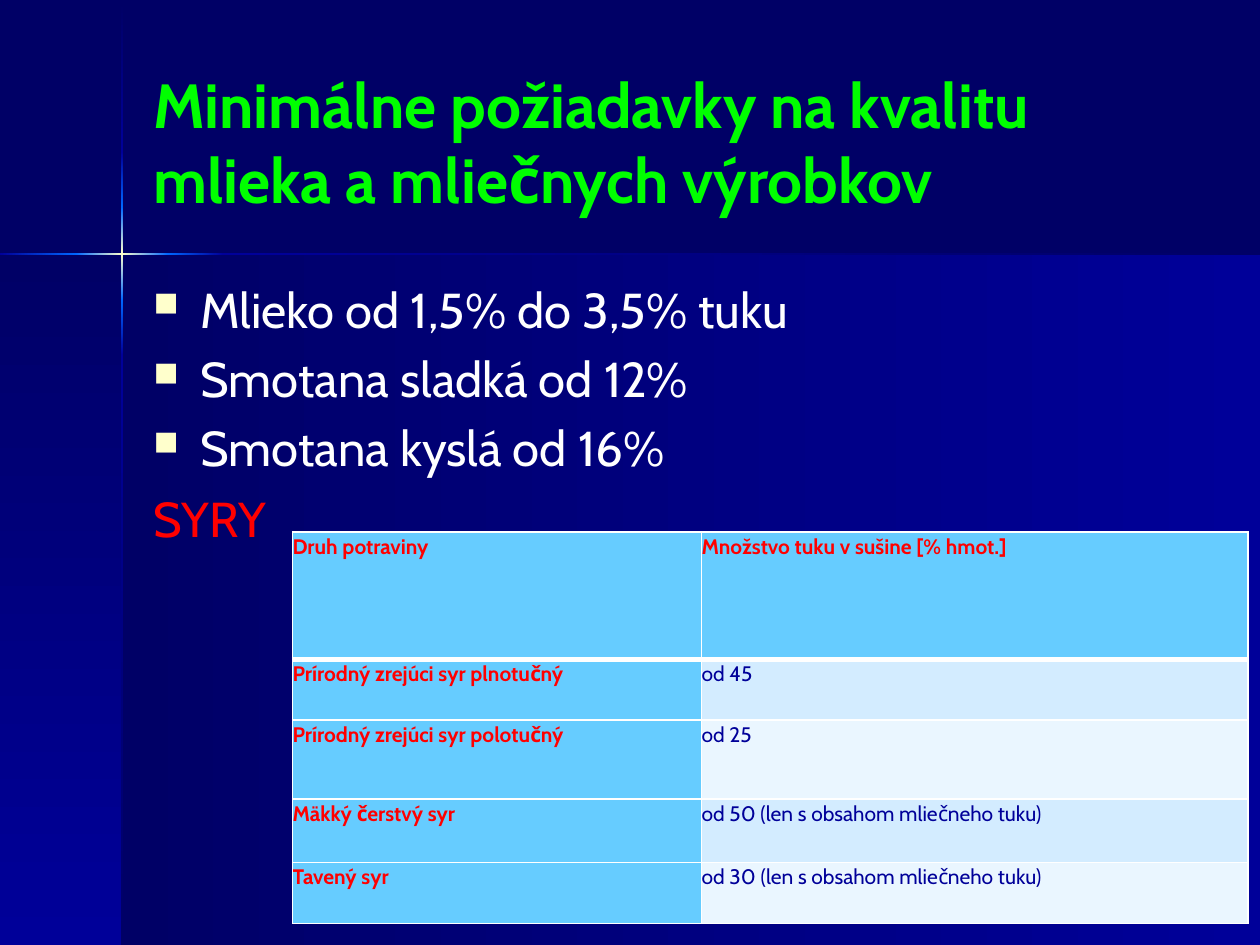
from copy import deepcopy
from dataclasses import dataclass

from lxml import etree
from pptx import Presentation
from pptx import util as u
from pptx.dml.color import RGBColor
from pptx.enum import shapes, text
from pptx.oxml.ns import qn

FONT = "Cabin"
NAVY, BLUE, AZURE, CREAM = "000066", "000099", "0066FF", "FFFFCC"
WHITE, RED, GREEN, SKY = "FFFFFF", "FF0000", "00FF00", "66CCFF"
BANDS = ("D3ECFF", "EAF6FF")
LEFTWARD, UPWARD = 180, 90


@dataclass
class Panel:
    left: float
    top: float
    width: float
    height: float
    colors: tuple
    angle: int


@dataclass
class Line:
    words: str
    size: float
    color: str
    bold: bool = False
    before: float = 0
    bullet: bool = False
    spacing: float = 1.0


def rgb(value: str) -> RGBColor:
    return RGBColor.from_string(value)


def draw_panel(slide, panel: Panel) -> None:
    rect = slide.shapes.add_shape(
        shapes.MSO_SHAPE.RECTANGLE,
        *map(u.Pt, (panel.left, panel.top, panel.width, panel.height)))
    rect.shadow.inherit = False
    rect.line.fill.background()
    rect.fill.gradient()
    rect.fill.gradient_angle = panel.angle
    if len(panel.colors) == 3:
        first = next(rect._element.spPr.iter(qn("a:gs")))
        middle = deepcopy(first)
        middle.set("pos", "50000")
        first.addnext(middle)
    for stop, color in zip(rect.fill.gradient_stops, panel.colors):
        stop.color.rgb = rgb(color)


def add_bullet(paragraph) -> None:
    props = paragraph._p.get_or_add_pPr()
    props.set("marL", str(u.Pt(27)))
    props.set("indent", str(u.Pt(-27)))
    color = etree.SubElement(props, qn("a:buClr"))
    etree.SubElement(color, qn("a:srgbClr"), val=CREAM)
    etree.SubElement(props, qn("a:buSzPct"), val="70000")
    etree.SubElement(props, qn("a:buChar"), char="■")


def write_lines(frame, lines: list[Line]) -> None:
    frame.word_wrap = True
    frame.text = "\n".join(line.words for line in lines)
    for paragraph, line in zip(frame.paragraphs, lines):
        paragraph.space_before = u.Pt(line.before)
        paragraph.line_spacing = line.spacing
        if line.bullet:
            add_bullet(paragraph)
        font = paragraph.runs[0].font
        font.name, font.size, font.bold = FONT, u.Pt(line.size), line.bold
        font.color.rgb = rgb(line.color)


def draw_text(slide, top: float, height: float, anchor, lines: list[Line]) -> None:
    box = slide.shapes.add_textbox(*map(u.Pt, (84, top, 594, height)))
    frame = box.text_frame
    frame.vertical_anchor = anchor
    frame.margin_left = frame.margin_right = u.Pt(3.6)
    frame.margin_top = frame.margin_bottom = u.Pt(3.6)
    write_lines(frame, lines)


def draw_borders(cell, widths: dict[str, float]) -> None:
    props = cell._tc.get_or_add_tcPr()
    for index, (side, width) in enumerate(widths.items()):
        border = etree.Element(qn(f"a:ln{side}"), w=str(u.Pt(width)))
        fill = etree.SubElement(border, qn("a:solidFill"))
        etree.SubElement(fill, qn("a:srgbClr"), val=WHITE)
        props.insert(index, border)


def draw_table(slide, rows: list[tuple], widths: list, heights: list) -> None:
    table = slide.shapes.add_table(
        len(rows), len(widths),
        *map(u.Pt, (167.2, 304, sum(widths), sum(heights)))).table
    table.first_row = table.horz_banding = False
    for column, width in zip(table.columns, widths):
        column.width = u.Pt(width)
    for r, (row, height) in enumerate(zip(rows, heights)):
        table.rows[r].height = u.Pt(height)
        for c, words in enumerate(row):
            cell = table.cell(r, c)
            cell.margin_left = cell.margin_right = 0
            cell.margin_top = cell.margin_bottom = 0
            heading = r == 0 or c == 0
            cell.fill.solid()
            cell.fill.fore_color.rgb = rgb(SKY if heading else BANDS[(r - 1) % 2])
            color = RED if heading else BLUE
            write_lines(cell.text_frame,
                        [Line(words, 12, color, bold=heading, spacing=1.07)])
            draw_borders(cell, {"L": 1, "R": 1, "T": 3 if r == 1 else 1,
                                "B": 3 if r == 0 else 1})


def main() -> None:
    deck = Presentation()
    deck.slide_width, deck.slide_height = u.Pt(720), u.Pt(540)
    slide = deck.slides.add_slide(deck.slide_layouts[6])
    slide.background.fill.solid()
    slide.background.fill.fore_color.rgb = rgb(NAVY)

    # Background panels, then the glowing cross
    glow = (AZURE, CREAM, AZURE)
    panels = [
        Panel(70, 145.5, 650, 394.5, (BLUE, NAVY), LEFTWARD),
        Panel(0, 145.5, 70, 394.5, (BLUE, NAVY), UPWARD),
    ]
    for top, height, colors in [
        (0.5, 86.5, (BLUE, NAVY)), (203, 337, (NAVY, BLUE)),
        (171.5, 31.5, (BLUE, AZURE)), (87, 31.5, (AZURE, BLUE)),
        (118.5, 53, glow),
    ]:
        panels.append(Panel(69, top, 1.5, height, colors, UPWARD))
    for left, width, colors in [
        (127.5, 592.5, (NAVY, BLUE)), (0, 43.5, (AZURE, BLUE)),
        (96, 31.5, (BLUE, AZURE)), (43.5, 52.5, glow),
    ]:
        panels.append(Panel(left, 144.5, width, 1.5, colors, LEFTWARD))
    for panel in panels:
        draw_panel(slide, panel)

    # Title and list
    draw_text(slide, 24, 113, text.MSO_ANCHOR.MIDDLE, [
        Line("Minimálne požiadavky na kvalitu mlieka a mliečnych výrobkov",
             35.6, GREEN, bold=True)])
    products = ["Mlieko od 1,5% do 3,5% tuku", "Smotana sladká od 12%",
                "Smotana kyslá od 16%"]
    draw_text(slide, 156, 189, text.MSO_ANCHOR.TOP,
              [Line(product, 28, WHITE, before=6, bullet=True)
               for product in products] + [Line("SYRY", 28, RED, before=7)])

    # Cheese table
    draw_table(slide, [
        ("Druh potraviny", "Množstvo tuku v sušine [% hmot.]"),
        ("Prírodný zrejúci syr plnotučný", "od 45"),
        ("Prírodný zrejúci syr polotučný", "od 25"),
        ("Mäkký čerstvý syr", "od 50 (len s obsahom mliečneho tuku)"),
        ("Tavený syr", "od 30 (len s obsahom mliečneho tuku)"),
    ], widths=[233.7, 312.3], heights=[72.8, 34.7, 45.2, 36.2, 34.9])

    deck.save("out.pptx")


if __name__ == "__main__":
    main()
